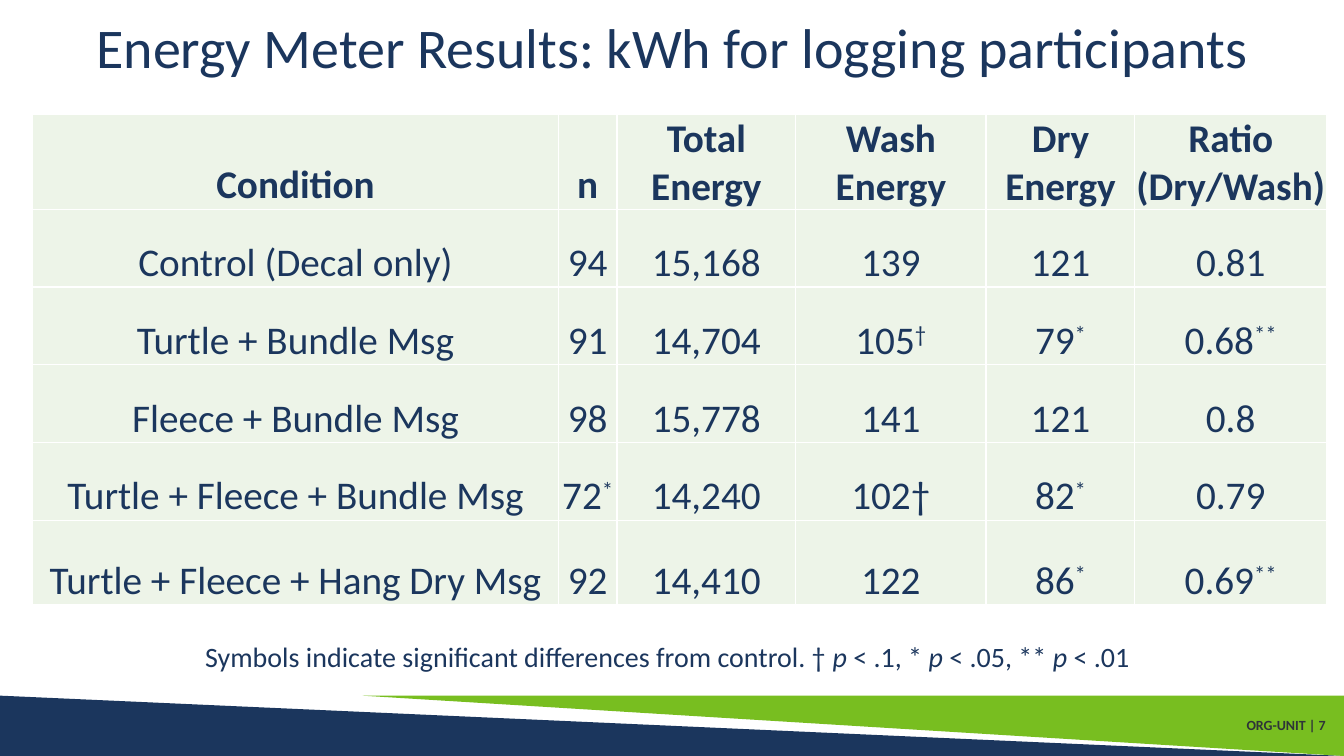
from typing import NamedTuple

from lxml import etree
from pptx import Presentation
from pptx.dml.color import RGBColor
from pptx.enum import shapes, text
from pptx.oxml import ns
from pptx.util import Cm, Pt

FONT = "Calibri"
NAVY, GREEN, PALE, WHITE, GREY = "1B365D", "78BE20", "EDF4E8", "FFFFFF", "2E3438"
WIDTH, HEIGHT = 33.87, 19.05
CENTER, RIGHT = text.PP_ALIGN.CENTER, text.PP_ALIGN.RIGHT


class Wedge(NamedTuple):
    left: float
    width: float
    rotation: int
    color: str


class Column(NamedTuple):
    heading: str
    width: float


WEDGES = [Wedge(0, WIDTH, 0, NAVY), Wedge(9.14, WIDTH - 9.14, 180, GREEN)]
WEDGE_HEIGHT = 1.52

COLUMNS = [
    Column("Condition", 13.25),
    Column("n", 1.48),
    Column("Total Energy", 4.5),
    Column("Wash Energy", 4.8),
    Column("Dry Energy", 3.75),
    Column("Ratio (Dry/Wash)", 4.83),
]
# A caret starts the superscript part of a value.
RESULTS = [
    ["Control (Decal only)", "94", "15,168", "139", "121", "0.81"],
    ["Turtle + Bundle Msg", "91", "14,704", "105^†", "79^*", "0.68^**"],
    ["Fleece + Bundle Msg", "98", "15,778", "141", "121", "0.8"],
    ["Turtle + Fleece + Bundle Msg", "72^*", "14,240", "102†", "82^*", "0.79"],
    ["Turtle + Fleece + Hang Dry Msg", "92", "14,410", "122", "86^*", "0.69^**"],
]
ROW_HEIGHTS = [2.18, 1.96, 1.96, 1.96, 1.96, 2.13]

# Every second part is italic.
FOOTNOTE = [
    "Symbols indicate significant differences from control. † ",
    "p ", "< .1, * ", "p", " < .05, ** ", "p", " < .01",
]


def rgb(color: str) -> RGBColor:
    return RGBColor.from_string(color)


def style(p, size: float, color: str, bold: bool = False, align=None) -> None:
    p.font.name = FONT
    p.font.size = Pt(size)
    p.font.bold = bold
    p.font.color.rgb = rgb(color)
    p.alignment = align


def add_wedge(s, wedge: Wedge) -> None:
    sp = s.shapes.add_shape(
        shapes.MSO_SHAPE.RIGHT_TRIANGLE, Cm(wedge.left), Cm(HEIGHT - WEDGE_HEIGHT),
        Cm(wedge.width), Cm(WEDGE_HEIGHT))
    sp.rotation = wedge.rotation
    sp.shadow.inherit = False
    sp.fill.solid()
    sp.fill.fore_color.rgb = rgb(wedge.color)
    sp.line.fill.background()


def set_borders(cell, color: str) -> None:
    tc_pr = cell._tc.get_or_add_tcPr()
    for i, side in enumerate(("lnL", "lnR", "lnT", "lnB")):
        ln = etree.Element(ns.qn(f"a:{side}"), w=str(Pt(1)))
        fill = etree.SubElement(ln, ns.qn("a:solidFill"))
        etree.SubElement(fill, ns.qn("a:srgbClr"), val=color)
        tc_pr.insert(i, ln)


def fill_cell(cell, value: str, bold: bool) -> None:
    cell.margin_left = cell.margin_right = cell.margin_top = Cm(0.02)
    cell.margin_bottom = 0
    cell.vertical_anchor = text.MSO_ANCHOR.BOTTOM
    cell.fill.solid()
    cell.fill.fore_color.rgb = rgb(PALE)
    set_borders(cell, WHITE)
    p = cell.text_frame.paragraphs[0]
    style(p, 28, NAVY, bold, CENTER)
    base, _, mark = value.partition("^")
    p.add_run().text = base
    if mark:
        r = p.add_run()
        r.text = mark
        r.font._element.set("baseline", "30000")


def add_results(s) -> None:
    rows = [[c.heading for c in COLUMNS], *RESULTS]
    table = s.shapes.add_table(
        len(rows), len(COLUMNS), Cm(0.82), Cm(2.88),
        Cm(sum(c.width for c in COLUMNS)), Cm(sum(ROW_HEIGHTS))).table
    table.first_row = table.horz_banding = False
    for table_column, column in zip(table.columns, COLUMNS):
        table_column.width = Cm(column.width)
    for i, values in enumerate(rows):
        table.rows[i].height = Cm(ROW_HEIGHTS[i])
        for j, value in enumerate(values):
            fill_cell(table.cell(i, j), value, bold=i == 0)


def add_title(s) -> None:
    title = s.shapes.title
    title.left, title.top, title.width, title.height = 0, 0, Cm(WIDTH), Cm(2.53)
    tf = title.text_frame
    tf.text = "Energy Meter Results: kWh for logging participants"
    tf.vertical_anchor = text.MSO_ANCHOR.MIDDLE
    style(tf.paragraphs[0], 40, NAVY, align=CENTER)
    tf.paragraphs[0].line_spacing = 0.9


def add_footnote(s) -> None:
    tf = s.shapes.add_textbox(Cm(4.92), Cm(16), Cm(24.03), Cm(1.12)).text_frame
    tf.word_wrap = False
    p = tf.paragraphs[0]
    style(p, 20, NAVY)
    for i, part in enumerate(FOOTNOTE):
        r = p.add_run()
        r.text = part
        r.font.italic = i % 2 == 1


def add_page_label(s) -> None:
    tf = s.shapes.add_textbox(Cm(29.82), Cm(17.83), Cm(3.84), Cm(0.94)).text_frame
    tf.word_wrap = True
    tf.vertical_anchor = text.MSO_ANCHOR.MIDDLE
    p = tf.paragraphs[0]
    p.text = "ORG-UNIT | 7"
    p.line_spacing = 0.9
    style(p, 10, GREY, bold=True, align=RIGHT)


def main() -> None:
    prs = Presentation()
    prs.slide_width, prs.slide_height = Cm(WIDTH), Cm(HEIGHT)
    s = prs.slides.add_slide(prs.slide_layouts[5])
    for wedge in WEDGES:
        add_wedge(s, wedge)
    add_page_label(s)
    add_title(s)
    add_footnote(s)
    add_results(s)
    prs.save("out.pptx")


if __name__ == "__main__":
    main()
